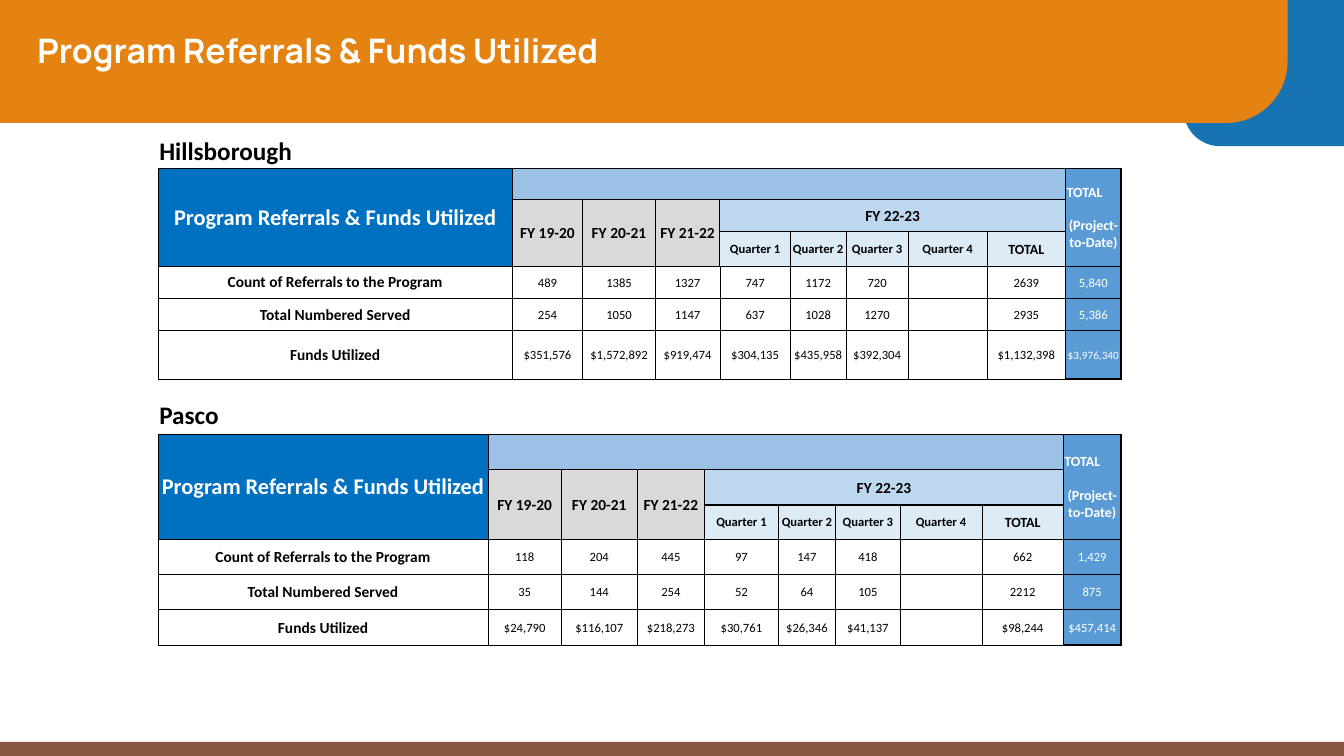
import math

from lxml import etree
from pptx import Presentation
from pptx.dml.color import RGBColor
from pptx.enum.shapes import MSO_SHAPE
from pptx.enum.text import MSO_ANCHOR, PP_ALIGN
from pptx.oxml.ns import qn
from pptx.util import Inches, Pt

RECTANGLE = MSO_SHAPE.RECTANGLE
MIDDLE = MSO_ANCHOR.MIDDLE
LEFT, CENTER = PP_ALIGN.LEFT, PP_ALIGN.CENTER

COLORS = {
    "orange": "E48312", "blue": "1773B1", "brown": "865640",
    "heading": "0070C0", "band": "9BC2E6", "year": "D9D9D9",
    "current": "BDD7EE", "quarter": "DDEBF7", "project": "5B9BD5",
    "black": "000000", "white": "FFFFFF",
}
PLAIN_TABLE_STYLE = "{2D5ABB26-0587-4C30-8999-92F81FD0307C}"
HEADING = "Program Referrals & Funds Utilized"
YEARS = ["FY 19-20", "FY 20-21", "FY 21-22"]
QUARTERS = ["Quarter 1", "Quarter 2", "Quarter 3", "Quarter 4"]
MEASURES = ["Count of Referrals to the Program", "Total Numbered Served", "Funds Utilized"]

COUNTIES = [
    {
        "name": "Hillsborough", "top": 1.34, "project_sizes": [9, 9, 8],
        "widths": [1.71, 0.55, 0.55, 0.7, 0.7, 0.72, 0.64, 0.7, 0.55, 0.62, 0.78, 0.78, 0.55],
        "heights": [0.33, 0.3, 0.32, 0.34, 0.32, 0.32, 0.48],
        "values": [
            ["489", "1385", "1327", "747", "1172", "720", "", "2639", "5,840"],
            ["254", "1050", "1147", "637", "1028", "1270", "", "2935", "5,386"],
            ["$351,576", "$1,572,892", "$919,474", "$304,135", "$435,958", "$392,304", "",
             "$1,132,398", "$3,976,340"],
        ],
    },
    {
        "name": "Pasco", "top": 3.94, "project_sizes": [9, 9, 9],
        "widths": [0.84, 0.56, 0.57, 0.57, 0.73, 0.73, 0.75, 0.67, 0.73, 0.57, 0.64, 0.81, 0.81,
                   0.57],
        "heights": [0.37, 0.35, 0.35, 0.34, 0.35, 0.35, 0.35],
        "values": [
            ["118", "204", "445", "97", "147", "418", "", "662", "1,429"],
            ["35", "144", "254", "52", "64", "105", "", "2212", "875"],
            ["$24,790", "$116,107", "$218,273", "$30,761", "$26,346", "$41,137", "",
             "$98,244", "$457,414"],
        ],
    },
]


class SlideBuilder:
    def __init__(self, slide):
        self.slide = slide
        self.table_font = "Calibri"
        self.title_font = "Manrope"

    def color(self, name):
        return RGBColor.from_string(COLORS[name])

    def paint(self, shape, fill):
        shape.shadow.inherit = False
        shape.fill.solid()
        shape.fill.fore_color.rgb = self.color(fill)
        shape.line.fill.background()

    def bar(self, left, top, width, height, fill):
        bar = self.slide.shapes.add_shape(
            RECTANGLE, Inches(left), Inches(top), Inches(width), Inches(height))
        self.paint(bar, fill)

    def panel(self, left, right, bottom, radius, rounded_left, fill):
        near, far, inward = (left, right, 1) if rounded_left else (right, left, -1)
        arc = [(near + inward * radius * (1 - math.cos(angle)),
                bottom - radius * (1 - math.sin(angle)))
               for angle in (math.pi / 2 * step / 24 for step in range(25))]
        outline = [(near, 0), *arc, (far, bottom), (far, 0)]
        points = [(Inches(x), Inches(y)) for x, y in outline]
        builder = self.slide.shapes.build_freeform(*points[0])
        builder.add_line_segments(points[1:], close=True)
        self.paint(builder.convert_to_shape(), fill)

    def style_text(self, paragraph, font, size, color, bold):
        for run in paragraph.runs:
            run.font.name = font
            run.font.size = Pt(size)
            run.font.bold = bold
            run.font.color.rgb = self.color(color)

    def title(self, text, left, top, width, height):
        frame = self.slide.shapes.add_textbox(
            Inches(left), Inches(top), Inches(width), Inches(height)).text_frame
        frame.word_wrap = True
        frame.margin_left = frame.margin_right = 0
        frame.text = text
        paragraph = frame.paragraphs[0]
        paragraph.line_spacing = 0.7
        self.style_text(paragraph, self.title_font, 24.1, "white", True)

    def table(self, left, top, widths, heights):
        table = self.slide.shapes.add_table(
            len(heights), len(widths), Inches(left), Inches(top),
            Inches(sum(widths)), Inches(sum(heights))).table
        table.first_row = table.horz_banding = False
        table._tbl.tblPr.find(qn("a:tableStyleId")).text = PLAIN_TABLE_STYLE
        for column, width in zip(table.columns, widths):
            column.width = Inches(width)
        for row, height in zip(table.rows, heights):
            row.height = Inches(height)
        return table

    def borders(self, cell, edges):
        properties = cell._tc.get_or_add_tcPr()
        for side in "LRTB":
            width = edges.get(side, 0)
            line = etree.SubElement(properties, qn(f"a:ln{side}"), w=str(Pt(width)))
            if width:
                solid = etree.SubElement(line, qn("a:solidFill"))
                etree.SubElement(solid, qn("a:srgbClr"), val=COLORS["black"])
            else:
                etree.SubElement(line, qn("a:noFill"))

    def cell(self, table, row, col, text="", size=9, bold=True, color="black", fill=None,
             rows=1, cols=1, thick="", sides="LRTB", align=CENTER):
        last_row, last_col = row + rows - 1, col + cols - 1
        for r in range(row, last_row + 1):
            for c in range(col, last_col + 1):
                part = table.cell(r, c)
                outer = {"L": c == col, "R": c == last_col, "T": r == row, "B": r == last_row}
                self.borders(part, {side: 1 if side in thick else 0.5
                                    for side in sides if outer[side]})
                if fill:
                    part.fill.solid()
                    part.fill.fore_color.rgb = self.color(fill)
                else:
                    part.fill.background()
        cell = table.cell(row, col)
        if rows * cols > 1:
            cell.merge(table.cell(last_row, last_col))
        cell.vertical_anchor = MIDDLE
        cell.margin_left = cell.margin_right = cell.margin_top = Inches(0.01)
        cell.margin_bottom = 0
        cell.text_frame.text = text
        for paragraph in cell.text_frame.paragraphs:
            paragraph.alignment = align
            self.style_text(paragraph, self.table_font, size, color, bold)
        return cell

    def county(self, name, top, widths, heights, values, project_sizes):
        table = self.table(1.57, top, widths, heights)
        first = len(widths) - len(values[0])
        quarter, project = first + len(YEARS), len(widths) - 1
        for col in range(len(widths)):
            self.cell(table, 0, col, "" if col else name, 18, thick="B", sides="B", align=LEFT)
        self.cell(table, 1, 0, HEADING, 16, color="white", fill="heading",
                  rows=3, cols=first, thick="LT")
        self.cell(table, 1, first, fill="band", cols=project - first, thick="TRB")
        project_head = self.cell(table, 1, project, "TOTAL\n(Project-to-Date)", 10, color="white",
                                 fill="project", rows=3, thick="LTR")
        total_line, scope_line = project_head.text_frame.paragraphs
        total_line.alignment = LEFT
        scope_line.space_before = Pt(12)
        for col, year in enumerate(YEARS, first):
            self.cell(table, 2, col, year, 11, fill="year", rows=2,
                      thick="TR" if col == first else "LTR")
        self.cell(table, 2, quarter, "FY 22-23", 11, fill="current",
                  cols=project - quarter, thick="LTRB")
        for col, label in enumerate(QUARTERS, quarter):
            self.cell(table, 3, col, label, fill="quarter", thick="LT" if col == quarter else "T")
        self.cell(table, 3, project - 1, "TOTAL", 10, fill="quarter", thick="TR")
        for row, (measure, figures, size) in enumerate(zip(MEASURES, values, project_sizes), 4):
            self.cell(table, row, 0, measure, 11, cols=first)
            for col, figure in enumerate(figures[:-1], first):
                self.cell(table, row, col, figure, bold=False)
            self.cell(table, row, project, figures[-1], size, False, "white", "project",
                      thick="RB" if row == len(heights) - 1 else "R")


def main():
    presentation = Presentation()
    presentation.slide_width, presentation.slide_height = Inches(13.33), Inches(7.5)
    builder = SlideBuilder(presentation.slides.add_slide(presentation.slide_layouts[6]))
    builder.panel(11.74, 13.33, 1.45, 0.36, True, "blue")
    builder.panel(-0.02, 12.77, 1.22, 0.61, False, "orange")
    builder.bar(-0.02, 7.36, 13.35, 0.14, "brown")
    builder.title(HEADING, 0.37, 0.36, 11.37, 0.42)
    for county in COUNTIES:
        builder.county(**county)
    presentation.save("out.pptx")


if __name__ == "__main__":
    main()
